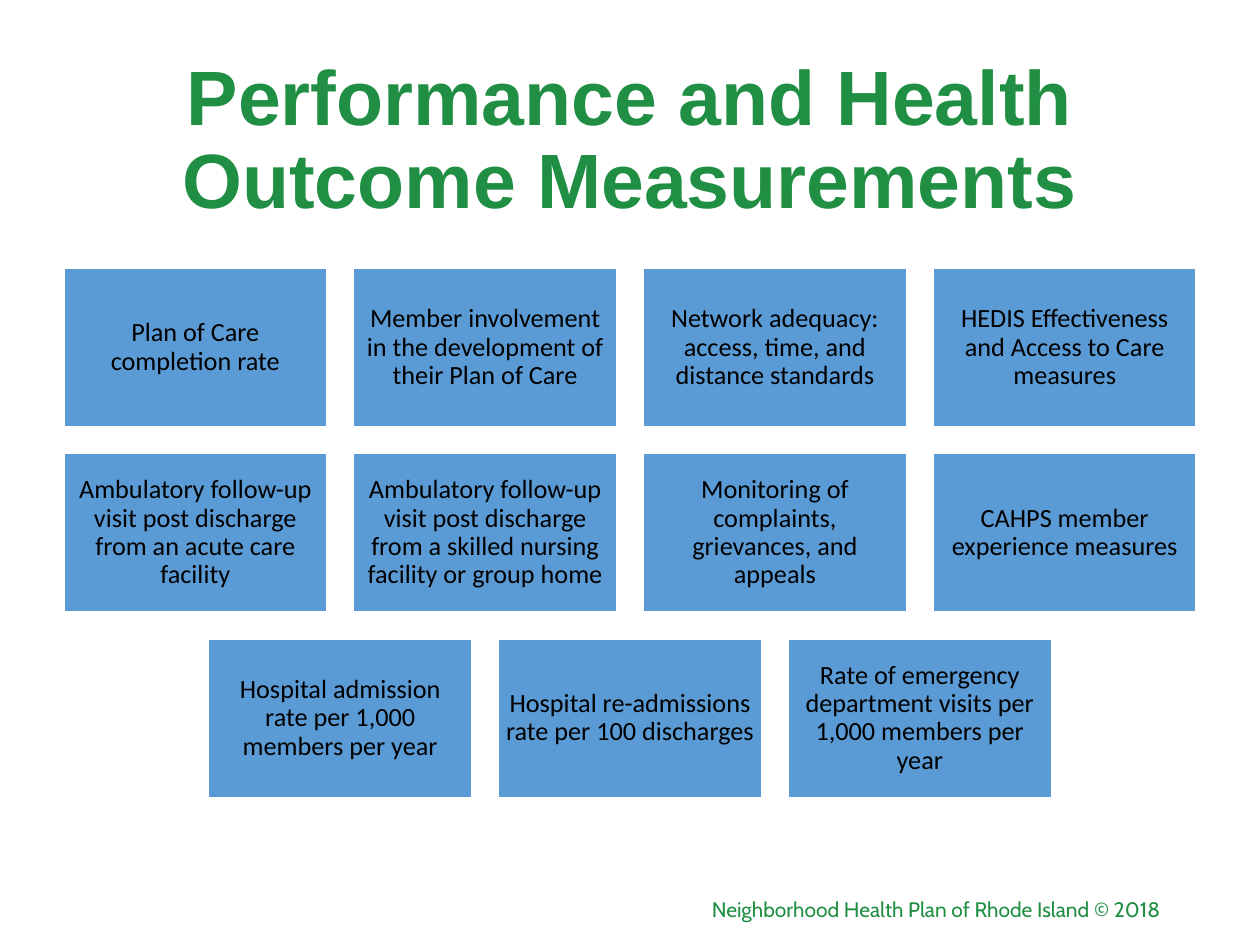
from pptx import Presentation
from pptx.dml.color import RGBColor
from pptx.enum.shapes import MSO_SHAPE
from pptx.enum.text import MSO_ANCHOR, PP_ALIGN
from pptx.util import Inches, Pt

SLIDE_WIDTH, SLIDE_HEIGHT = 10, 7.5
CARD_WIDTH, CARD_HEIGHT, GAP = 2.09, 1.26, 0.21
GRID_TOP = 2.13
MEASURES = [
    [
        "Plan of Care completion rate",
        "Member involvement in the development of their Plan of Care",
        "Network adequacy: access, time, and distance standards",
        "HEDIS Effectiveness and Access to Care measures",
    ],
    [
        "Ambulatory follow-up visit post discharge from an acute care facility",
        "Ambulatory follow-up visit post discharge from a skilled nursing facility or group home",
        "Monitoring of complaints, grievances, and appeals",
        "CAHPS member experience measures",
    ],
    [
        "Hospital admission rate per 1,000 members per year",
        "Hospital re-admissions rate per 100 discharges",
        "Rate of emergency department visits per 1,000 members per year",
    ],
]


def color(hex_code):
    return RGBColor.from_string(hex_code)


class MeasuresPage:
    """Holds the style and the current slide, and draws its elements."""

    green, blue, white, black = "208F44", "5B9BD5", "FFFFFF", "000000"

    def __init__(self, page):
        self.page = page

    def set_text(self, shape, text, font, size, ink, align, spacing=1.0, bold=False):
        frame = shape.text_frame
        frame.text = text
        frame.word_wrap = True
        frame.vertical_anchor = MSO_ANCHOR.MIDDLE
        para = frame.paragraphs[0]
        para.alignment = align
        para.line_spacing = spacing
        span = para.runs[0]
        span.font.name = font
        span.font.size = Pt(size)
        span.font.bold = bold
        span.font.color.rgb = color(ink)

    def text_box(self, left, top, width, height):
        return self.page.shapes.add_textbox(
            Inches(left), Inches(top), Inches(width), Inches(height))

    def title(self, text):
        box = self.text_box(0.69, 0.4, 8.62, 1.45)
        self.set_text(box, text, "Arial", 44, self.green, PP_ALIGN.CENTER, 0.9, True)

    def card(self, text, left, top):
        card = self.page.shapes.add_shape(
            MSO_SHAPE.RECTANGLE, Inches(left), Inches(top),
            Inches(CARD_WIDTH), Inches(CARD_HEIGHT))
        card.shadow.inherit = False
        card.fill.solid()
        card.fill.fore_color.rgb = color(self.blue)
        card.line.color.rgb = color(self.white)
        card.line.width = Pt(1)
        frame = card.text_frame
        frame.margin_left = frame.margin_right = Inches(0.06)
        frame.margin_top = frame.margin_bottom = Inches(0.06)
        self.set_text(card, text, "Calibri", 15, self.black, PP_ALIGN.CENTER, 0.9)

    def card_row(self, texts, top):
        row_width = len(texts) * (CARD_WIDTH + GAP) - GAP
        start = (SLIDE_WIDTH - row_width) / 2
        for column, text in enumerate(texts):
            self.card(text, start + column * (CARD_WIDTH + GAP), top)

    def footer(self, text):
        box = self.text_box(3.31, 7.08, 6, 0.27)
        self.set_text(box, text, "Cabin", 12, self.green, PP_ALIGN.RIGHT)


def main():
    deck = Presentation()
    deck.slide_width = Inches(SLIDE_WIDTH)
    deck.slide_height = Inches(SLIDE_HEIGHT)
    measures = MeasuresPage(deck.slides.add_slide(deck.slide_layouts[6]))
    measures.title("Performance and Health Outcome Measurements")
    for row, texts in enumerate(MEASURES):
        measures.card_row(texts, GRID_TOP + row * (CARD_HEIGHT + GAP))
    measures.footer("Neighborhood Health Plan of Rhode Island © 2018")
    deck.save("out.pptx")


if __name__ == "__main__":
    main()
